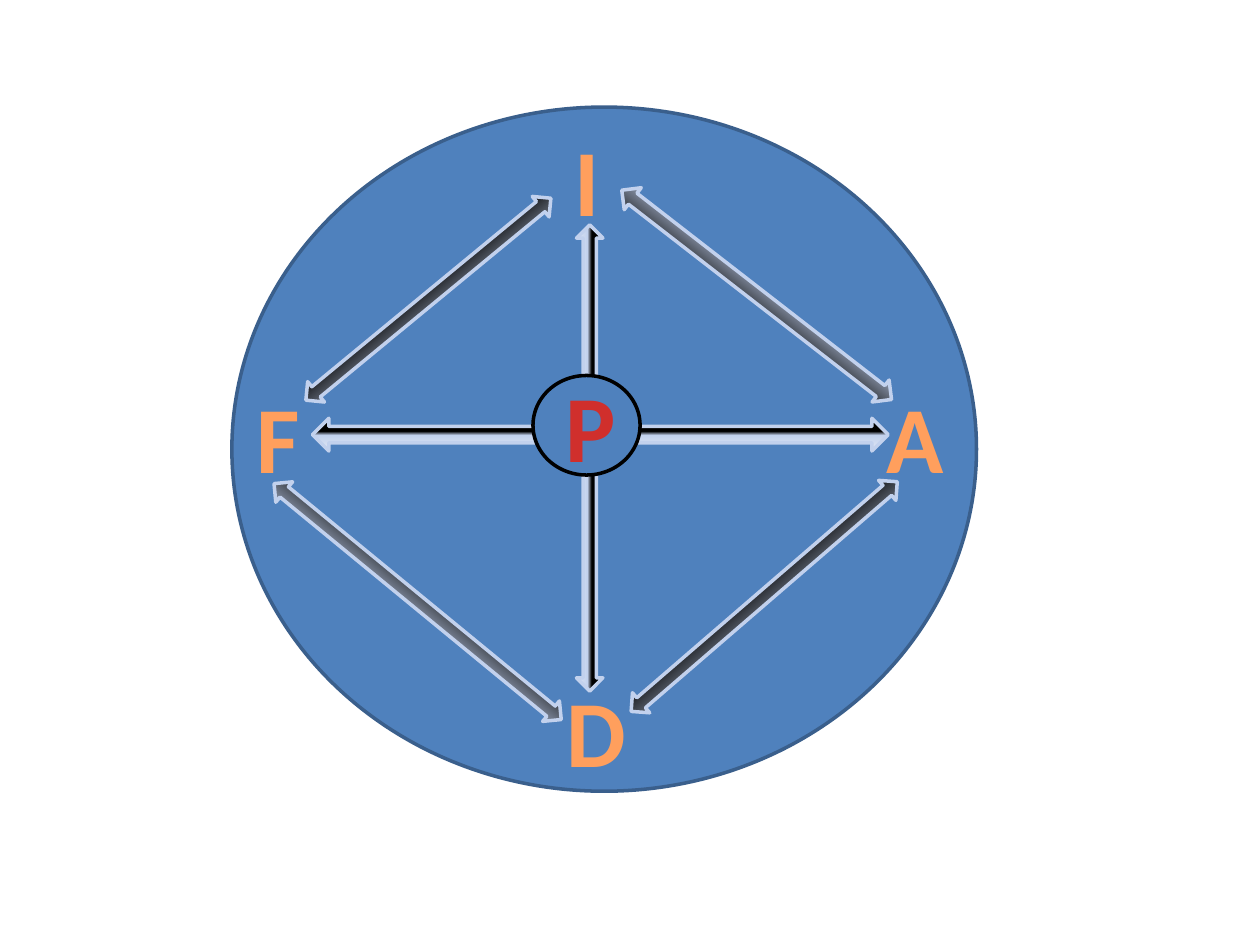
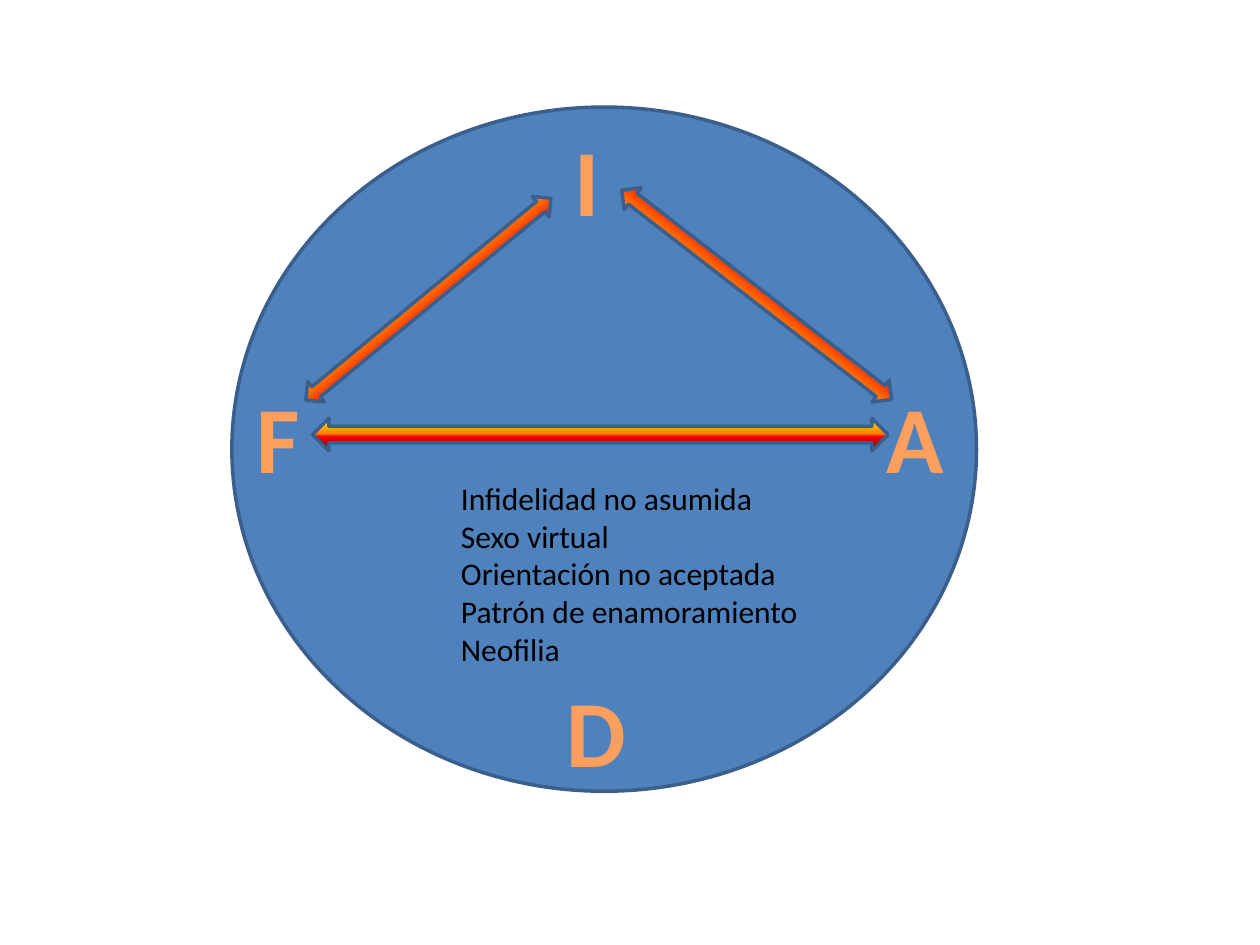
import lxml.etree
import pptx
import pptx.dml.color
import pptx.enum.shapes
import pptx.enum.text
import pptx.oxml.ns
import pptx.util

Inches = pptx.util.Inches
Preset = pptx.enum.shapes.MSO_SHAPE

FONT = "Calibri"
BLUE, DARK_BLUE, PALE_BLUE = "4F81BD", "3A5F8C", "C2D1ED"
ORANGE, RED, BLACK = "FF9F5D", "D02F2C", "000000"
FIRE = [(0, "FFF200"), (48, "FF7A00"), (55, "FF0300"), (100, "4D0808")]

LETTERS = {
    "I": (4.46, 0.92, 0.4, 1.01),
    "A": (6.93, 2.96, 0.66, 1.01),
    "D": (4.39, 5.29, 0.68, 1.01),
    "F": (1.93, 2.96, 0.55, 1.01),
}
ARROWS = {
    "F-I": ((2.14, 2.27, 2.52, 0.21), 320.5),
    "D-A": ((4.67, 4.63, 2.79, 0.21), 319.2),
    "F-D": ((1.84, 4.67, 2.95, 0.21), 39.4),
    "I-A": ((4.65, 2.23, 2.71, 0.22), 217.8),
    "F-A": ((2.48, 3.32, 4.57, 0.26), 0),
    "I-D": ((2.83, 3.53, 3.7, 0.21), 90),
}
STEEL_STOPS = {"F-I": (44, 63), "D-A": (44, 63), "F-D": (42, 58),
               "I-A": (42, 58), "F-A": (40, 52), "I-D": (42, 58)}
TOPICS = ["Infidelidad no asumida", "Sexo virtual", "Orientación no aceptada",
          "Patrón de enamoramiento", "Neofilia"]


def color(value):
    """Return the RGB colour for a hex string."""
    return pptx.dml.color.RGBColor.from_string(value)


def steel(dark_end, pale_start):
    """Return gradient stops from black to pale blue."""
    return [(dark_end, BLACK), (pale_start, PALE_BLUE), (100, "E1E8F5")]


class Diagram:
    """Draws the elements of the circle diagrams on the current slide."""

    def __init__(self):
        self.presentation = pptx.Presentation()
        self.presentation.slide_width = Inches(10)
        self.presentation.slide_height = Inches(7.5)
        self.slide = None

    def new_slide(self):
        """Start a slide with the large circle and its four letters."""
        layout = self.presentation.slide_layouts[6]
        self.slide = self.presentation.slides.add_slide(layout)
        self.ellipse((1.84, 0.85, 5.91, 5.43), DARK_BLUE)
        for letter, box in LETTERS.items():
            self.letter(letter, box, ORANGE)

    def shape(self, preset, box, line):
        """Add an outlined preset shape without a shadow."""
        shape = self.slide.shapes.add_shape(preset, *map(Inches, box))
        shape.shadow.inherit = False
        shape.line.color.rgb = color(line)
        shape.line.width = pptx.util.Pt(2)
        return shape

    def ellipse(self, box, line):
        """Add a blue ellipse."""
        shape = self.shape(Preset.OVAL, box, line)
        shape.fill.solid()
        shape.fill.fore_color.rgb = color(BLUE)

    def arrow(self, name, stops, line):
        """Add the named double arrow with a gradient from top to bottom."""
        box, rotation = ARROWS[name]
        shape = self.shape(Preset.LEFT_RIGHT_ARROW, box, line)
        shape.rotation = rotation
        shape.fill.gradient()
        shape.fill.gradient_angle = 270
        qn = pptx.oxml.ns.qn
        stop_list = next(shape._element.iter(qn("a:gsLst")))
        for stop in list(stop_list):
            stop_list.remove(stop)
        for position, value in stops:
            stop = lxml.etree.SubElement(stop_list, qn("a:gs"), pos=str(position * 1000))
            lxml.etree.SubElement(stop, qn("a:srgbClr"), val=value)

    def text(self, lines, box, size, value, bold=False, wrap=True, alignment=None):
        """Add a text box with one paragraph per line."""
        text_frame = self.slide.shapes.add_textbox(*map(Inches, box)).text_frame
        text_frame.word_wrap = wrap
        text_frame.auto_size = pptx.enum.text.MSO_AUTO_SIZE.SHAPE_TO_FIT_TEXT
        text_frame.text = "\n".join(lines)
        for paragraph in text_frame.paragraphs:
            paragraph.alignment = alignment
            for run in paragraph.runs:
                run.font.name = FONT
                run.font.size = pptx.util.Pt(size)
                run.font.bold = bold
                run.font.color.rgb = color(value)

    def letter(self, letter, box, value):
        """Add a large bold centred letter."""
        self.text([letter], box, 54, value, bold=True, wrap=False,
                  alignment=pptx.enum.text.PP_ALIGN.CENTER)


def main():
    """Build both slides and save the presentation."""
    diagram = Diagram()

    diagram.new_slide()
    for name, stops in STEEL_STOPS.items():
        diagram.arrow(name, steel(*stops), PALE_BLUE)
    diagram.ellipse((4.23, 2.98, 0.85, 0.79), BLACK)
    diagram.letter("P", (4.38, 2.87, 0.61, 1.01), RED)

    diagram.new_slide()
    for name in ("F-I", "I-A", "F-A"):
        diagram.arrow(name, FIRE, DARK_BLUE)
    diagram.text(TOPICS, (3.56, 3.75, 3.01, 1.92), 18, BLACK)

    diagram.presentation.save("out.pptx")


if __name__ == "__main__":
    main()
